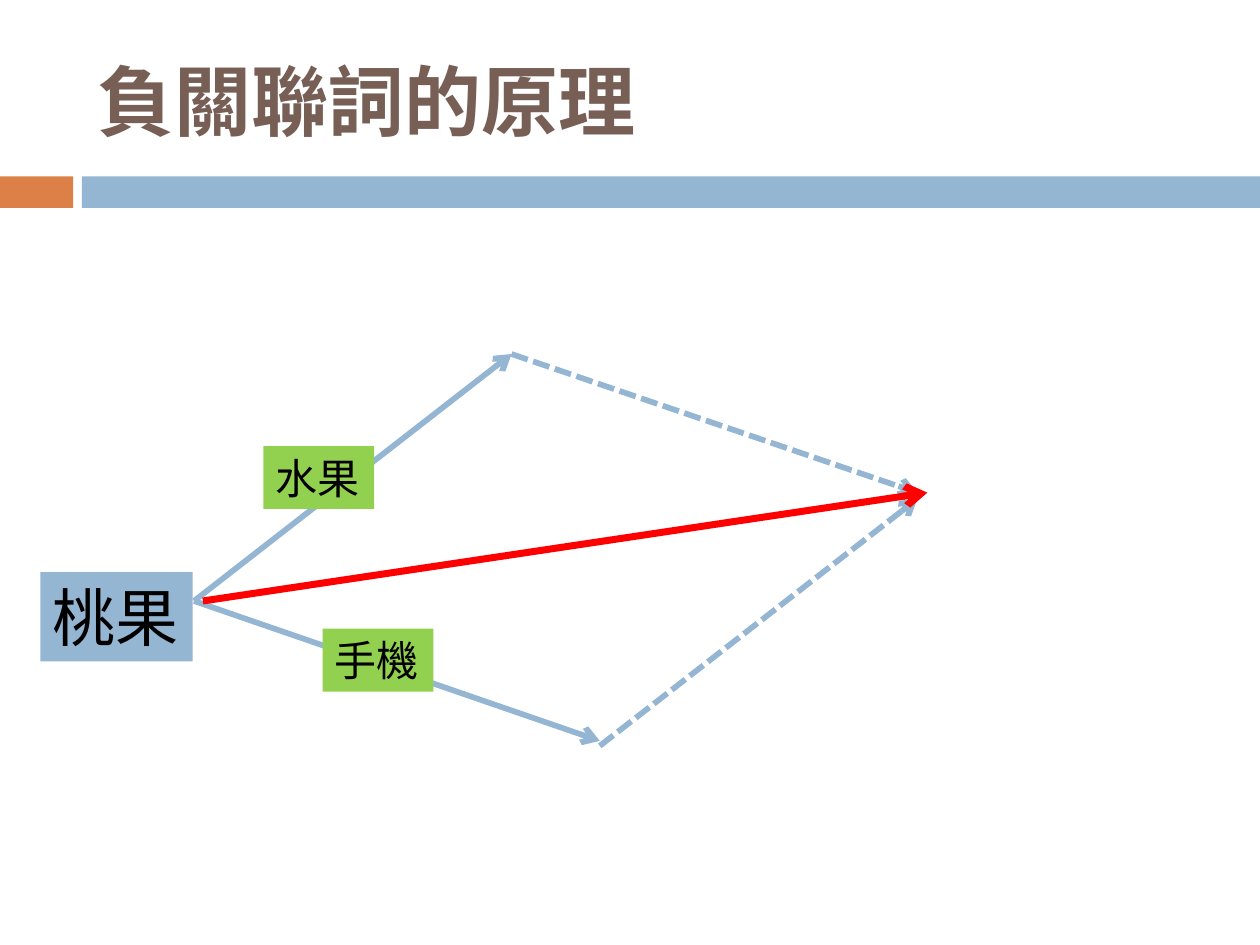
from lxml.etree import SubElement
from pptx import Presentation
from pptx.dml.color import RGBColor
from pptx.enum.dml import MSO_LINE
from pptx.enum.shapes import MSO_CONNECTOR, MSO_SHAPE
from pptx.enum.text import MSO_ANCHOR, MSO_AUTO_SIZE, PP_ALIGN
from pptx.oxml.ns import qn
from pptx.util import Inches, Pt

THEME = {
    "font": "Calibri",
    "brown": "775F55", "orange": "DD8047", "blue": "94B6D2",
    "green": "92D050", "red": "FF0000", "black": "000000",
    "title": 44, "word": 36, "sense": 24,
    "vector": 3.25, "sum": 4,
}

TITLE = "負關聯詞的原理"
TITLE_BOX = (0.67, 0.25, 8.92, 1.08)
BANDS = [((0, 1.4, 0.58, 0.25), "orange"), ((0.65, 1.4, 9.35, 0.25), "blue")]

WORD_SIZE, SENSE_SIZE = (1.21, 0.71), (0.88, 0.5)
LABELS = [
    ("桃果", (0.32, 4.54), WORD_SIZE, "blue", "word"),
    ("水果", (2.09, 3.54), SENSE_SIZE, "green", "sense"),
    ("手機", (2.56, 4.99), SENSE_SIZE, "green", "sense"),
]

ORIGIN, FRUIT_TIP, PHONE_TIP = (1.54, 4.77), (4.06, 2.81), (4.76, 5.88)
VECTORS = [(ORIGIN, FRUIT_TIP, "blue", "vector", None),
           (ORIGIN, PHONE_TIP, "blue", "vector", None)]
SUMS = [(FRUIT_TIP, (7.28, 3.91), "blue", "vector", MSO_LINE.SQUARE_DOT),
        ((4.76, 5.92), (7.28, 3.96), "blue", "vector", MSO_LINE.SQUARE_DOT),
        ((1.61, 4.77), (7.36, 3.91), "red", "sum", None)]


def color(key):
    return RGBColor.from_string(THEME[key])


def apply(target, values):
    for attribute, value in values.items():
        setattr(target, attribute, value)


def write(frame, text, size, ink, align, bold, **frame_format):
    apply(frame, {"vertical_anchor": MSO_ANCHOR.MIDDLE, **frame_format})
    paragraph = frame.paragraphs[0]
    paragraph.alignment = align
    run = paragraph.add_run()
    run.text = text
    apply(run.font, {"name": THEME["font"], "size": Pt(THEME[size]), "bold": bold})
    run.font.color.rgb = color(ink)


def add_block(slide, box, fill):
    block = slide.shapes.add_shape(MSO_SHAPE.RECTANGLE, *map(Inches, box))
    block.shadow.inherit = False
    block.fill.solid()
    block.fill.fore_color.rgb = color(fill)
    block.line.fill.background()
    return block


def add_arrow(slide, start, end, ink, width, dash):
    arrow = slide.shapes.add_connector(
        MSO_CONNECTOR.STRAIGHT, *map(Inches, start + end))
    arrow.line.color.rgb = color(ink)
    apply(arrow.line, {"width": Pt(THEME[width]), "dash_style": dash})
    SubElement(arrow.line._get_or_add_ln(), qn("a:tailEnd"), type="arrow")
    SubElement(arrow._element.spPr, qn("a:effectLst"))


def main():
    deck = Presentation()
    apply(deck, {"slide_width": Inches(10), "slide_height": Inches(7.5)})
    slide = deck.slides.add_slide(deck.slide_layouts[5])

    for box, fill in BANDS:
        add_block(slide, box, fill)

    title = slide.shapes.title
    apply(title, dict(zip(("left", "top", "width", "height"), map(Inches, TITLE_BOX))))
    write(title.text_frame, TITLE, "title", "brown", PP_ALIGN.LEFT, True)

    for vector in VECTORS:
        add_arrow(slide, *vector)
    for text, corner, extent, fill, size in LABELS:
        label = add_block(slide, corner + extent, fill)
        write(label.text_frame, text, size, "black", PP_ALIGN.LEFT, False,
              word_wrap=False, auto_size=MSO_AUTO_SIZE.SHAPE_TO_FIT_TEXT,
              vertical_anchor=MSO_ANCHOR.TOP)
    for arrow in SUMS:
        add_arrow(slide, *arrow)

    deck.save("out.pptx")


if __name__ == "__main__":
    main()
